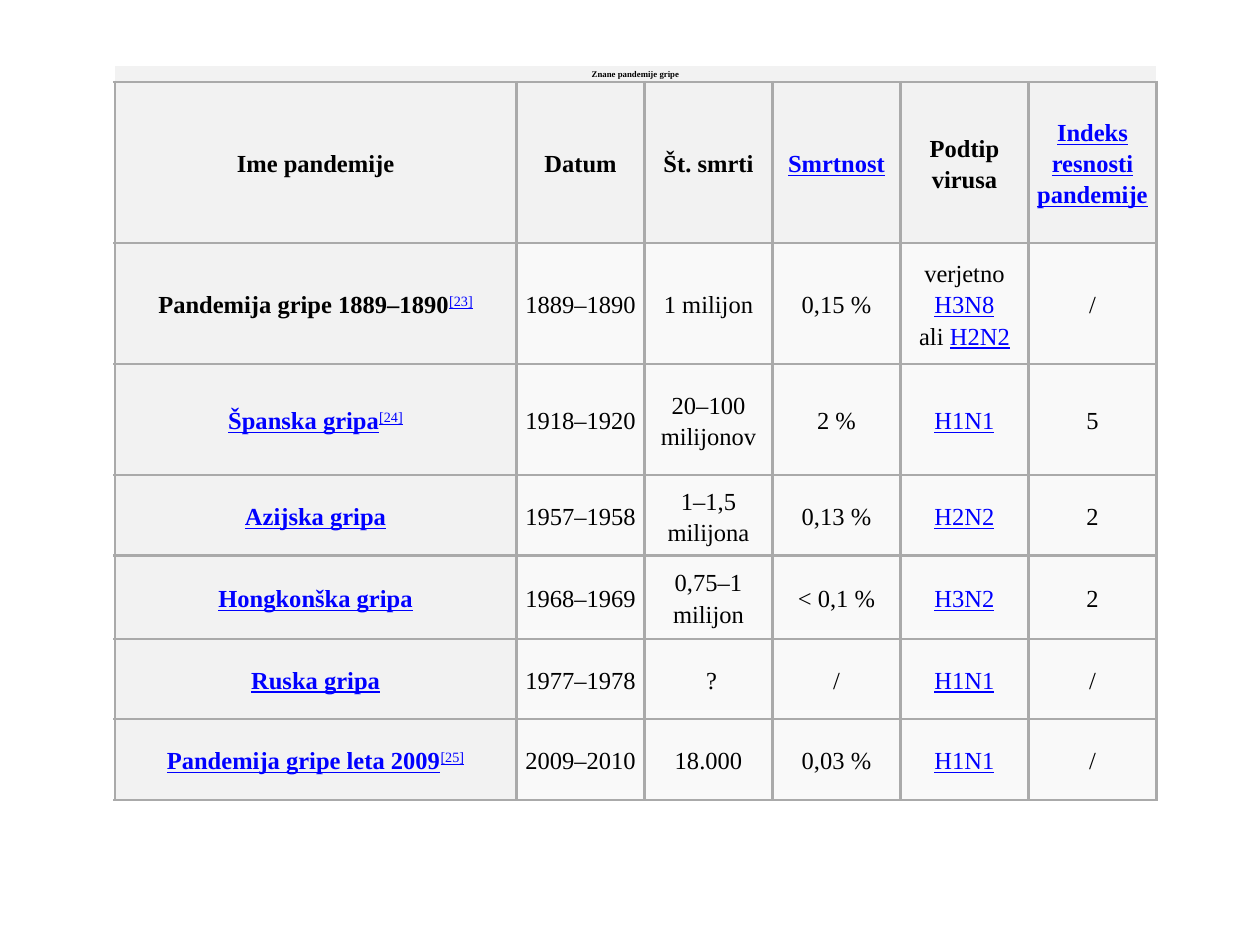
from dataclasses import dataclass

from lxml.etree import SubElement
from pptx import Presentation
from pptx.dml.color import RGBColor
from pptx.enum.text import MSO_ANCHOR, PP_ALIGN
from pptx.oxml.ns import qn
from pptx.table import _Cell
from pptx.text.text import _Paragraph
from pptx.util import Inches, Pt

FONT = "Times New Roman"
BLACK = RGBColor(0x00, 0x00, 0x00)
LINK_BLUE = RGBColor(0x00, 0x00, 0xFF)
HEADER_GREY = RGBColor(0xF2, 0xF2, 0xF2)
BODY_GREY = RGBColor(0xF9, 0xF9, 0xF9)
BORDER_GREY = RGBColor(0xAA, 0xAA, 0xAA)

BODY_SIZE = 14
CAPTION_SIZE = 5
ROW_HEIGHTS = [0.13, 1.28, 0.96, 0.88, 0.64, 0.66, 0.64, 0.64]
TABLE_WIDTH = 8.27
NAME_WIDTH = 3.19
COLUMN_COUNT = 6
ALL_SIDES = ("lnL", "lnR", "lnT", "lnB")


@dataclass(frozen=True)
class Part:
    """A stretch of cell text; a link is blue and underlined."""
    text: str
    link: bool = False
    note: bool = False
    break_after: bool = False


@dataclass(frozen=True)
class Pandemic:
    name: list[Part]
    years: str
    deaths: str
    mortality: str
    subtype: list[Part]
    severity: str


def link(text: str) -> Part:
    return Part(text, link=True)


def note(text: str) -> Part:
    return Part(text, link=True, note=True)


CAPTION = "Znane pandemije gripe"
HEADINGS = [
    Part("Ime pandemije"), Part("Datum"), Part("Št. smrti"),
    link("Smrtnost"), Part("Podtip virusa"), link("Indeks resnosti pandemije"),
]
PANDEMICS = [
    Pandemic([Part("Pandemija gripe 1889–1890"), note("[23]")],
             "1889–1890", "1 milijon", "0,15 %",
             [Part("verjetno "), Part("H3N8", link=True, break_after=True),
              Part("ali "), link("H2N2")], "/"),
    Pandemic([link("Španska gripa"), note("[24]")],
             "1918–1920", "20–100 milijonov", "2 %", [link("H1N1")], "5"),
    Pandemic([link("Azijska gripa")],
             "1957–1958", "1–1,5 milijona", "0,13 %", [link("H2N2")], "2"),
    Pandemic([link("Hongkonška gripa")],
             "1968–1969", "0,75–1 milijon", "< 0,1 %", [link("H3N2")], "2"),
    Pandemic([link("Ruska gripa")],
             "1977–1978", " ?", "/", [link("H1N1")], "/"),
    Pandemic([link("Pandemija gripe leta 2009"), note("[25]")],
             "2009–2010", "18.000", "0,03 %", [link("H1N1")], "/"),
]


def add_text(paragraph: _Paragraph, text: str, *, size: float = BODY_SIZE,
             color: RGBColor = BLACK, bold: bool = False,
             underline: bool = False, superscript: bool = False) -> None:
    run = paragraph.add_run()
    run.text = text
    font = run.font
    font.name, font.size = FONT, Pt(size)
    font.bold, font.underline = bold, underline
    font.color.rgb = color
    if superscript:
        run._r.get_or_add_rPr().set("baseline", "30000")


def add_break(paragraph: _Paragraph, size: int = BODY_SIZE) -> None:
    paragraph.add_line_break()
    line_break = paragraph._p.findall(qn("a:br"))[-1]
    SubElement(line_break, qn("a:rPr"), sz=str(size * 100))


def set_borders(cell: _Cell, visible: tuple[str, ...]) -> None:
    properties = cell._tc.get_or_add_tcPr()
    for position, side in enumerate(ALL_SIDES):
        line = SubElement(properties, qn(f"a:{side}"), w=str(Pt(1.5)))
        properties.insert(position, line)
        if side in visible:
            fill = SubElement(line, qn("a:solidFill"))
            SubElement(fill, qn("a:srgbClr"), val=str(BORDER_GREY))
        else:
            SubElement(line, qn("a:noFill"))


def fill_cell(cell: _Cell, parts: list[Part], *, fill: RGBColor,
              bold: bool = False, size: int = BODY_SIZE,
              borders: tuple[str, ...] = ALL_SIDES) -> None:
    cell.margin_left = cell.margin_right = Inches(0.02)
    cell.margin_top = cell.margin_bottom = Inches(0.01)
    cell.vertical_anchor = MSO_ANCHOR.MIDDLE
    cell.fill.solid()
    cell.fill.fore_color.rgb = fill
    set_borders(cell, borders)
    paragraph = cell.text_frame.paragraphs[0]
    paragraph.alignment = PP_ALIGN.CENTER
    paragraph.line_spacing = 1.15
    for part in parts:
        add_text(paragraph, part.text, size=size, bold=bold and not part.note,
                 color=LINK_BLUE if part.link else BLACK,
                 underline=part.link, superscript=part.note)
        if part.break_after:
            add_break(paragraph, size)


def main() -> None:
    presentation = Presentation()
    presentation.slide_width, presentation.slide_height = Inches(10), Inches(7.5)
    slide = presentation.slides.add_slide(presentation.slide_layouts[6])

    # Table grid: a wide name column and five equal ones
    table = slide.shapes.add_table(
        len(ROW_HEIGHTS), COLUMN_COUNT, Inches(0.91), Inches(0.52),
        Inches(TABLE_WIDTH), Inches(sum(ROW_HEIGHTS))).table
    table.first_row = table.horz_banding = False
    value_width = (TABLE_WIDTH - NAME_WIDTH) / (COLUMN_COUNT - 1)
    for index, column in enumerate(table.columns):
        column.width = Inches(value_width if index else NAME_WIDTH)
    for row, height in zip(table.rows, ROW_HEIGHTS):
        row.height = Inches(height)

    # Caption across all columns
    table.cell(0, 0).merge(table.cell(0, COLUMN_COUNT - 1))
    for column in range(COLUMN_COUNT):
        fill_cell(table.cell(0, column), [] if column else [Part(CAPTION)],
                  fill=HEADER_GREY, bold=True, size=CAPTION_SIZE, borders=("lnB",))

    # Column headings
    for column, heading in enumerate(HEADINGS):
        fill_cell(table.cell(1, column), [heading], fill=HEADER_GREY, bold=True)

    # One row per pandemic
    for row, pandemic in enumerate(PANDEMICS, start=2):
        fill_cell(table.cell(row, 0), pandemic.name, fill=HEADER_GREY, bold=True)
        values = [[Part(pandemic.years)], [Part(pandemic.deaths)],
                  [Part(pandemic.mortality)], pandemic.subtype,
                  [Part(pandemic.severity)]]
        for column, parts in enumerate(values, start=1):
            fill_cell(table.cell(row, column), parts, fill=BODY_GREY)

    presentation.save("out.pptx")


if __name__ == "__main__":
    main()
